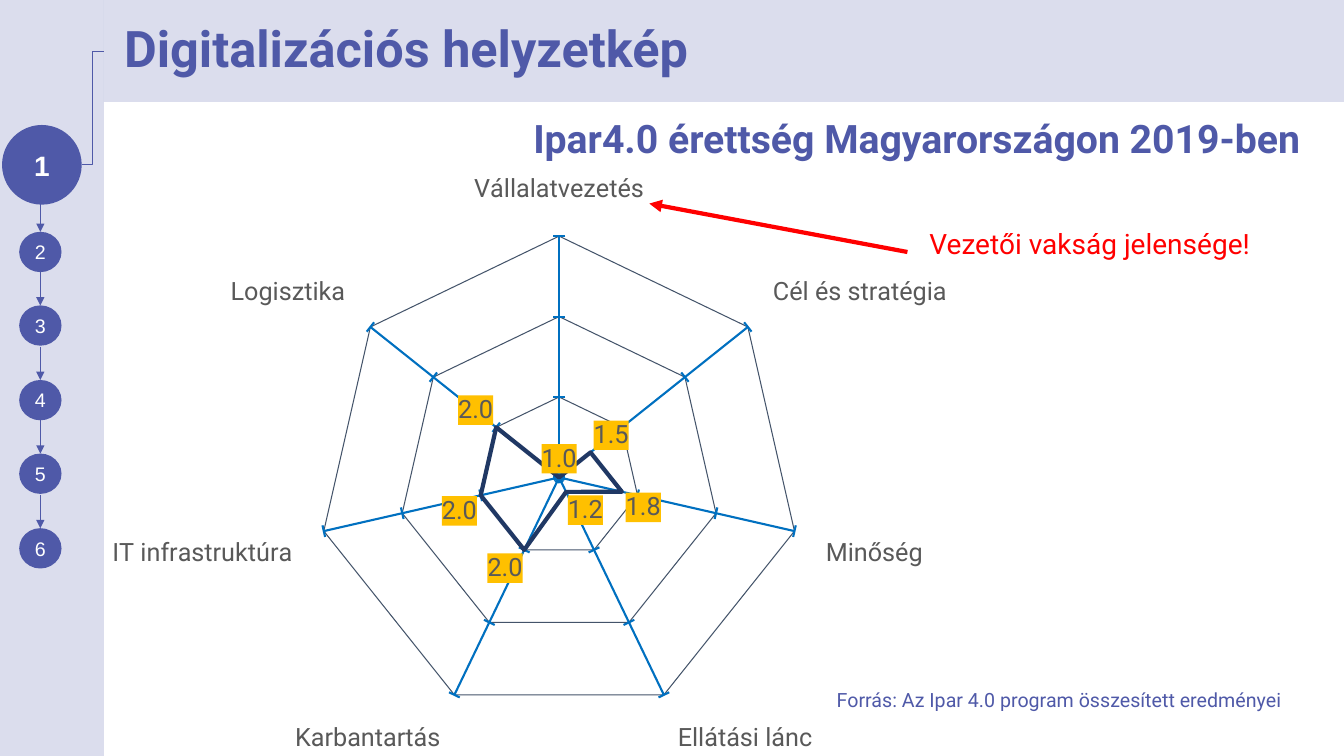
from lxml import etree
from pptx import Presentation
from pptx.chart.data import CategoryChartData
from pptx.dml.color import RGBColor
from pptx.enum.chart import XL_CHART_TYPE, XL_TICK_LABEL_POSITION, XL_TICK_MARK
from pptx.enum.shapes import MSO_CONNECTOR, MSO_SHAPE
from pptx.enum.text import MSO_ANCHOR, PP_ALIGN
from pptx.oxml import parse_xml
from pptx.oxml.ns import nsdecls, qn
from pptx.util import Pt

LEFT, CENTER, RIGHT = PP_ALIGN.LEFT, PP_ALIGN.CENTER, PP_ALIGN.RIGHT
TOP, MIDDLE = MSO_ANCHOR.TOP, MSO_ANCHOR.MIDDLE
STRAIGHT, ELBOW = MSO_CONNECTOR.STRAIGHT, MSO_CONNECTOR.ELBOW
RECT, OVAL = MSO_SHAPE.RECTANGLE, MSO_SHAPE.OVAL
NO_TICK, TICK_OUT = XL_TICK_MARK.NONE, XL_TICK_MARK.OUTSIDE

EMU_PER_PX = 9144  # 100 px to the inch
SLIDE_W, SLIDE_H = 1333, 750
SIDEBAR_W, HEADER_H = 103, 101
COLORS = {
    "indigo": "4F59A8", "white": "FFFFFF", "red": "FF0000", "navy": "203864",
    "blue": "0070C0", "slate": "44546A", "gray": "595959", "pale": "D9D9D9",
    "amber": "FFC000",
}
MATURITY = {
    "Vállalatvezetés": 1, "Cél és stratégia": 1.5, "Minőség": 1.8,
    "Ellátási lánc": 1.2, "Karbantartás": 2, "IT infrastruktúra": 2,
    "Logisztika": 2,
}


def px(*values):
    return [v * EMU_PER_PX for v in values]


def rgb(name):
    return RGBColor.from_string(COLORS[name])


def style_line(line, color, width):
    line.color.rgb = rgb(color)
    line.width = Pt(width)


def style_font(font, size, color, name="Roboto", bold=False):
    font.name, font.size, font.bold = name, Pt(size), bold
    font.color.rgb = rgb(color)


def tint(shape):
    """Fill with indigo at 20 % opacity."""
    shape.fill.solid()
    shape.fill.fore_color.rgb = rgb("indigo")
    clr = shape._element.spPr.find(qn("a:solidFill")).find(qn("a:srgbClr"))
    etree.SubElement(clr, qn("a:alpha")).set("val", "20000")


def write(shape, text, size, color, align=LEFT, anchor=TOP, indent=0,
          spacing=None, **font):
    tf = shape.text_frame
    tf.word_wrap = True
    tf.vertical_anchor = anchor
    p = tf.paragraphs[0]
    p.alignment = align
    p.line_spacing = spacing
    pPr = p._p.get_or_add_pPr()
    pPr.set("marL", str(indent * EMU_PER_PX))
    pPr.set("indent", "0")
    r = p.add_run()
    r.text = text
    style_font(r.font, size, color, **font)


def add_text(s, box, *args, **options):
    write(s.shapes.add_textbox(*px(*box)), *args, **options)


def add_line(s, kind, ends, color, width, arrow=False):
    line = s.shapes.add_connector(kind, *px(*ends))
    style_line(line.line, color, width)
    spPr = line._element.spPr
    if arrow:
        ln = spPr.find(qn("a:ln"))
        etree.SubElement(ln, qn("a:tailEnd")).set("type", "triangle")
    etree.SubElement(spPr, qn("a:effectLst"))


def add_node(s, box, label, size, bold=False):
    node = s.shapes.add_shape(OVAL, *px(*box))
    node.shadow.inherit = False
    node.fill.solid()
    node.fill.fore_color.rgb = rgb("indigo")
    node.line.fill.background()
    tf = node.text_frame
    tf.margin_left = tf.margin_right = tf.margin_top = tf.margin_bottom = 0
    write(node, label, size, "white", CENTER, MIDDLE, name="Arial", bold=bold)


def add_sidebar(s, x, y, w, h):
    """Chapter tracker: the current chapter is large and tied to the title."""
    band = s.shapes.add_shape(RECT, *px(x, y, w, h))
    band.shadow.inherit = False
    band.line.fill.background()
    tint(band)
    axis, first_top, gap = x + 40, y + 230, 33
    for i in range(5):
        top = first_top + i * 147 // 2
        add_line(s, STRAIGHT, (axis, top - gap, axis, top), "indigo", 1, True)
        add_node(s, (axis - 21, top, 42, 40), str(i + 2), 14)
    add_node(s, (x + 2, y + 124, 79, 79), "1", 20, bold=True)
    add_line(s, ELBOW, (x + 81, y + 163, x + w, y + 51), "indigo", 0.75)


def add_header(s, x, y, w, h):
    title = s.shapes.title
    title.left, title.top, title.width, title.height = px(x, y, w, h)
    tint(title)
    write(title, "Digitalizációs helyzetkép", 36, "indigo", anchor=MIDDLE,
          indent=10, spacing=0.9, bold=True)


def set_plot_area(chart, x, y, w, h):
    """Fix the inner plot area, in fractions of the chart box."""
    plot_area = chart._chartSpace.chart.plotArea
    for old in plot_area.findall(qn("c:layout")):
        plot_area.remove(old)
    layout = etree.Element(qn("c:layout"))
    manual = etree.SubElement(layout, qn("c:manualLayout"))
    parts = {"layoutTarget": "inner", "xMode": "edge", "yMode": "edge",
             "x": x, "y": y, "w": w, "h": h}
    for tag, value in parts.items():
        etree.SubElement(manual, qn("c:" + tag)).set("val", str(value))
    plot_area.insert(0, layout)


def style_axis(axis, line, width, grid, tick):
    style_font(axis.tick_labels.font, 18, "gray")
    style_line(axis.format.line, line, width)
    axis.has_major_gridlines = True
    style_line(axis.major_gridlines.format.line, grid, 0.75)
    axis.major_tick_mark, axis.minor_tick_mark = tick, NO_TICK


def style_labels(labels):
    labels.show_value = True
    labels.number_format = "#,##0.0"
    labels.number_format_is_linked = False
    style_font(labels.font, 18, "gray")
    labels._element.find(qn("c:txPr")).addprevious(parse_xml(
        f'<c:spPr {nsdecls("c", "a")}><a:solidFill>'
        f'<a:srgbClr val="{COLORS["amber"]}"/></a:solidFill></c:spPr>'))


def add_radar(s, x, y, w, h):
    data = CategoryChartData(number_format="#,##0.0")
    data.categories = list(MATURITY)
    data.add_series("Series 1", list(MATURITY.values()))
    chart = s.shapes.add_chart(XL_CHART_TYPE.RADAR, *px(x, y, w, h), data).chart
    chart.has_legend = chart.has_title = False
    style_font(chart.font, 18, "gray")
    set_plot_area(chart, 0.225, 0.117, 0.566, 0.82)

    style_axis(chart.category_axis, "pale", 0.75, "pale", NO_TICK)
    scale = chart.value_axis
    style_axis(scale, "blue", 1.5, "slate", TICK_OUT)
    scale.tick_label_position = XL_TICK_LABEL_POSITION.NONE
    scale.minimum_scale, scale.maximum_scale, scale.major_unit = 1, 4, 1

    plot = chart.plots[0]
    plot.vary_by_categories = False
    series = plot.series[0]
    style_line(series.format.line, "navy", 3)
    style_labels(series.data_labels)


def add_content(s, x, y, w, h):
    add_text(s, (x + 15, y - 6, 1181, 90),
             "Ipar4.0 érettség Magyarországon 2019-ben", 28, "indigo",
             RIGHT, MIDDLE, spacing=0.9, bold=True)
    add_text(s, (x + 705, y + 577, 482, 59),
             "Forrás: Az Ipar 4.0 program összesített eredményei", 14,
             "indigo", indent=12)
    add_radar(s, x, y + 65, 889, h - 65)
    add_line(s, STRAIGHT, (x + 797, y + 149, x + 541, y + 101), "red", 3, True)
    add_text(s, (x + 797, y + 119, w - 797, 59), "Vezetői vakság jelensége!",
             20, "red", indent=12)


def main():
    prs = Presentation()
    prs.slide_width, prs.slide_height = px(SLIDE_W, SLIDE_H)
    s = prs.slides.add_slide(prs.slide_layouts[5])
    body_w = SLIDE_W - SIDEBAR_W
    add_sidebar(s, 0, 0, SIDEBAR_W, SLIDE_H)
    add_header(s, SIDEBAR_W, 0, body_w, HEADER_H)
    add_content(s, SIDEBAR_W, HEADER_H, body_w, SLIDE_H - HEADER_H)
    prs.save("out.pptx")


if __name__ == "__main__":
    main()
